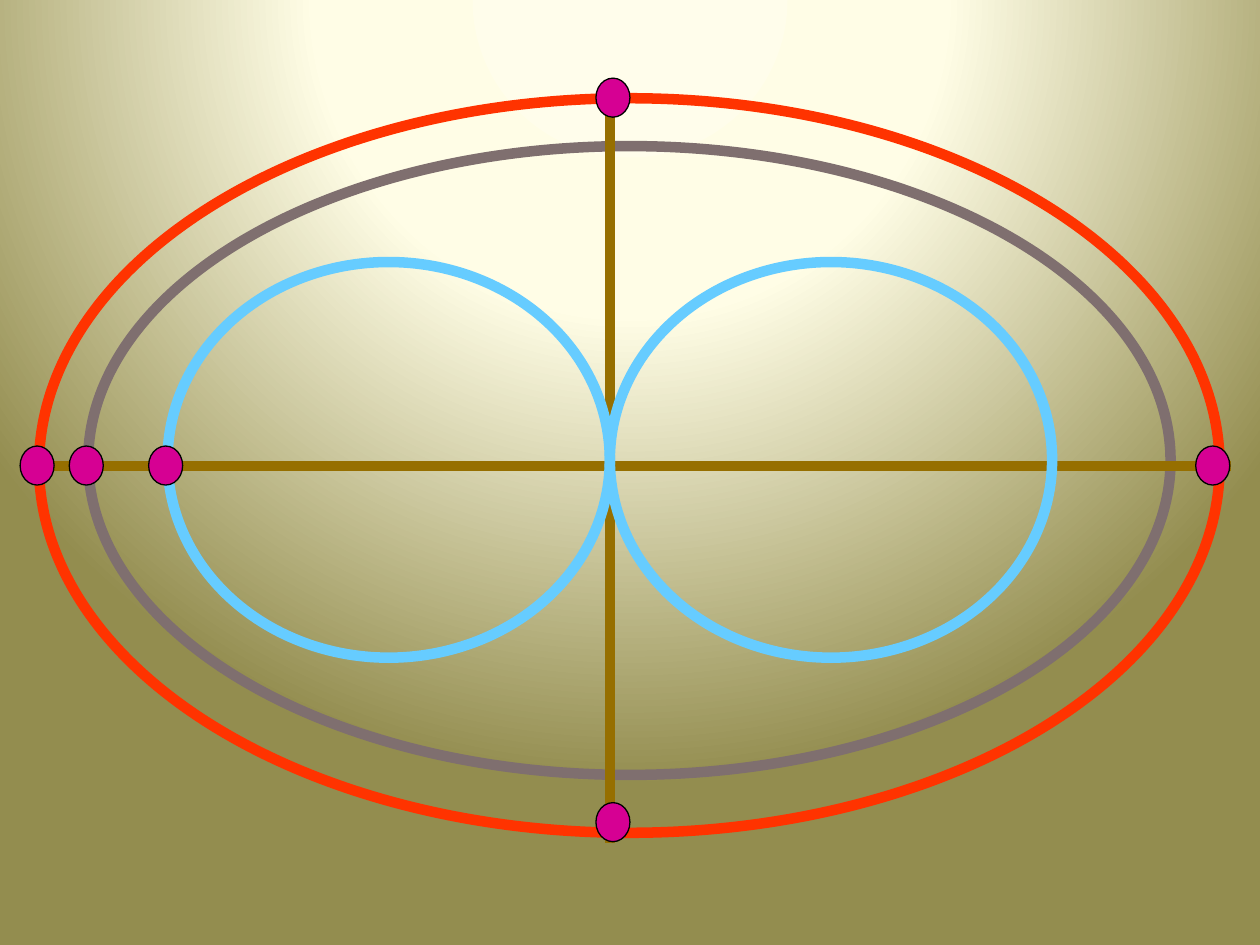
from pptx import Presentation
from pptx.dml.color import RGBColor
from pptx.enum.shapes import MSO_CONNECTOR, MSO_SHAPE
from pptx.oxml import parse_xml
from pptx.oxml.ns import nsdecls, qn
from pptx.util import Pt
from lxml.etree import SubElement


def set_line(shape, color, width):
    shape.line.color.rgb = RGBColor.from_string(color)
    shape.line.width = Pt(width)


def add_oval(shapes, kind, left, top, width, height, line_color, line_width, fill_color=None):
    shape = shapes.add_shape(kind, Pt(left), Pt(top), Pt(width), Pt(height))
    shape.shadow.inherit = False
    if fill_color:
        shape.fill.solid()
        shape.fill.fore_color.rgb = RGBColor.from_string(fill_color)
    else:
        shape.fill.background()
    set_line(shape, line_color, line_width)


presentation = Presentation()
presentation.slide_width = Pt(720)
presentation.slide_height = Pt(540)
slide = presentation.slides.add_slide(presentation.slide_layouts[6])

stops = "".join(
    f'<a:gs pos="{position * 1000}"><a:srgbClr val="{color}"/></a:gs>'
    for position, color in [(0, "FFFDEB"), (40, "FFFDE6"), (100, "938D4F")]
)
background = parse_xml(
    f'<p:bg {nsdecls("p", "a")}><p:bgPr><a:gradFill rotWithShape="1">'
    f'<a:gsLst>{stops}</a:gsLst><a:path path="circle">'
    '<a:fillToRect l="50000" t="-80000" r="50000" b="180000"/></a:path>'
    '</a:gradFill><a:effectLst/></p:bgPr></p:bg>'
)
slide.element.cSld.insert(0, background)

center_x, center_y = 348.48, 266.4
diagram = slide.shapes.add_group_shape().shapes

add_oval(diagram, MSO_SHAPE.OVAL, 22.32, 56.16, 674.64, 419.76, "FF3300", 6)
add_oval(diagram, MSO_SHAPE.OVAL, 50.4, 83.52, 618.48, 359.28, "7F6F6F", 6)

axes = [
    (center_x, 50.4, center_x, 481.68),
    (17.28, center_y, 703.44, center_y),
]
for ends in axes:
    axis = diagram.add_connector(MSO_CONNECTOR.STRAIGHT, *[Pt(value) for value in ends])
    set_line(axis, "966F00", 6)
    SubElement(axis.element.spPr, qn("a:effectLst"))

circle_width = 252.72
for left in (center_x - circle_width, center_x):
    add_oval(diagram, MSO_SHAPE.FLOWCHART_CONNECTOR, left, 149.76,
             circle_width, 226.08, "66CCFF", 6)

dot_row, dot_column = 254.88, 340.56
dots = [
    (39.6, dot_row),
    (11.52, dot_row),
    (dot_column, 44.64),
    (dot_column, 458.64),
    (84.96, dot_row),
    (683.28, dot_row),
]
for left, top in dots:
    add_oval(slide.shapes, MSO_SHAPE.OVAL, left, top, 19.44, 22.32, "000000", 0.75, "D60093")

presentation.save("out.pptx")
